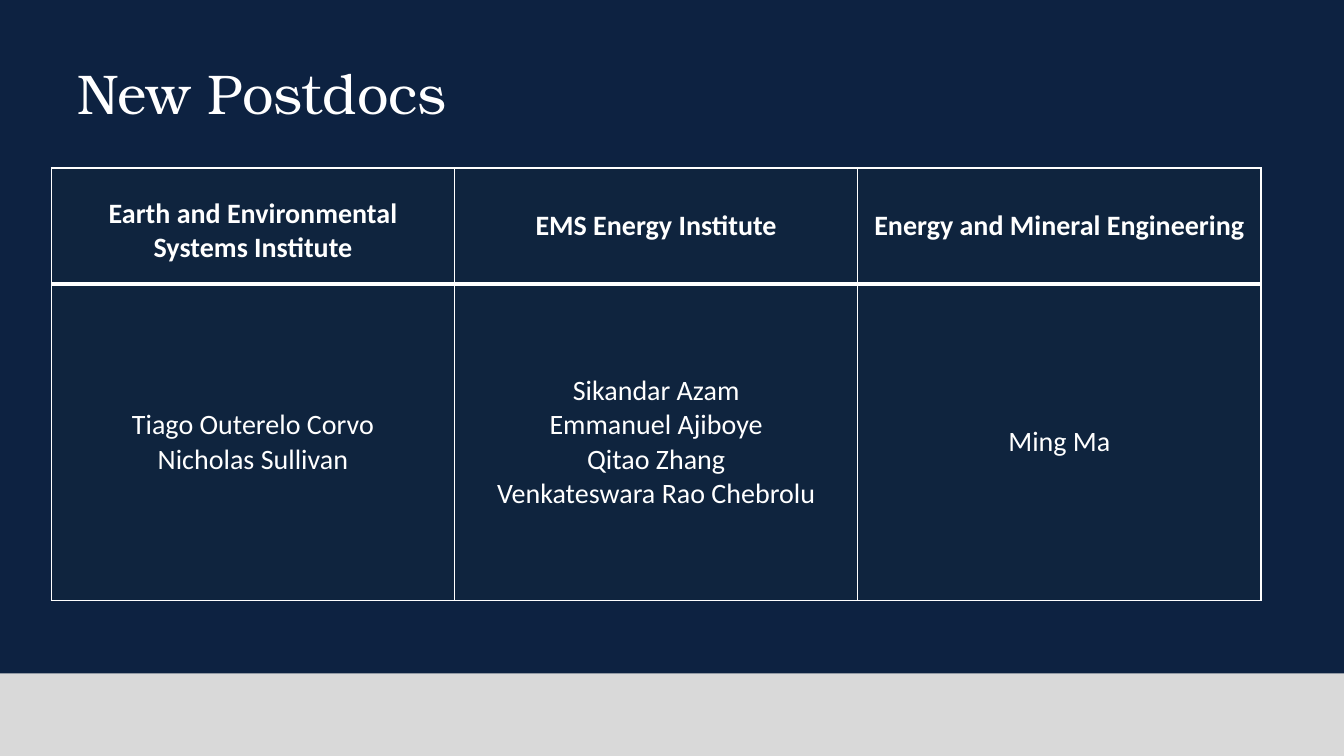
from pptx import Presentation
from pptx.dml.color import RGBColor
from pptx.enum.shapes import MSO_SHAPE
from pptx.enum.text import MSO_ANCHOR, PP_ALIGN
from pptx.oxml.ns import qn
from pptx.util import Pt
from lxml.etree import SubElement

COLORS = {"navy": "0D2241", "cell": "0F243E", "band": "D9D9D9", "white": "FFFFFF"}
INSTITUTES = {
    "Earth and Environmental Systems Institute": ["Tiago Outerelo Corvo", "Nicholas Sullivan"],
    "EMS Energy Institute": [
        "Sikandar Azam", "Emmanuel Ajiboye", "Qitao Zhang", "Venkateswara Rao Chebrolu",
    ],
    "Energy and Mineral Engineering": ["Ming Ma"],
}


class SlideBuilder:
    title_font = "TeX Gyre Bonum"
    body_font = "Calibri"

    def __init__(self, deck):
        self.page = deck.slides.add_slide(deck.slide_layouts[5])

    def paint(self, fill, color):
        fill.solid()
        fill.fore_color.rgb = RGBColor.from_string(COLORS[color])

    def add_lines(self, frame, lines, font, size, align, bold=False):
        for index, line in enumerate(lines):
            para = frame.paragraphs[0] if index == 0 else frame.add_paragraph()
            para.alignment = align
            span = para.add_run()
            span.text = line
            span.font.name = font
            span.font.size = Pt(size)
            span.font.bold = bold
            span.font.color.rgb = RGBColor.from_string(COLORS["white"])

    def background(self, color):
        self.paint(self.page.background.fill, color)

    def band(self, left, top, width, height, color):
        box = self.page.shapes.add_shape(
            MSO_SHAPE.RECTANGLE, Pt(left), Pt(top), Pt(width), Pt(height))
        box.shadow.inherit = False
        box.line.fill.background()
        self.paint(box.fill, color)

    def title(self, text, left, top, width, height):
        box = self.page.shapes.title
        box.left, box.top, box.width, box.height = Pt(left), Pt(top), Pt(width), Pt(height)
        box.text_frame.vertical_anchor = MSO_ANCHOR.MIDDLE
        self.add_lines(box.text_frame, [text], self.title_font, 40, PP_ALIGN.LEFT)

    def borders(self, cell, widths):
        properties = cell._tc.get_or_add_tcPr()
        for index, (side, width) in enumerate(widths.items()):
            line = properties.makeelement(qn(f"a:ln{side}"), {"w": str(Pt(width))})
            fill = SubElement(line, qn("a:solidFill"))
            SubElement(fill, qn("a:srgbClr"), val=COLORS["white"])
            properties.insert(index, line)

    def cell(self, cell, lines, header):
        cell.vertical_anchor = MSO_ANCHOR.MIDDLE
        cell.margin_left = cell.margin_right = Pt(7.8)
        cell.margin_top = cell.margin_bottom = Pt(4)
        self.paint(cell.fill, "cell")
        self.add_lines(cell.text_frame, lines, self.body_font, 20, PP_ALIGN.CENTER, header)
        top, bottom = (1, 3) if header else (3, 1)
        self.borders(cell, {"L": 1, "R": 1, "T": top, "B": bottom})

    def table(self, columns, left, top, width, row_heights):
        frame = self.page.shapes.add_table(
            len(row_heights), len(columns), Pt(left), Pt(top), Pt(width), Pt(sum(row_heights)))
        table = frame.table
        for row, height in zip(table.rows, row_heights):
            row.height = Pt(height)
        for index, (institute, names) in enumerate(columns.items()):
            table.columns[index].width = Pt(width / len(columns))
            self.cell(table.cell(0, index), [institute], True)
            self.cell(table.cell(1, index), names, False)
        first_header = table.cell(0, 0)
        first_header.vertical_anchor = MSO_ANCHOR.BOTTOM
        first_header.margin_bottom = Pt(13.5)


def main():
    deck = Presentation()
    deck.slide_width, deck.slide_height = Pt(960), Pt(540)
    builder = SlideBuilder(deck)
    builder.background("navy")
    builder.band(0, 481, 960, 59, "band")
    builder.title("New Postdocs", 48, 26, 864, 80)
    builder.table(INSTITUTES, 36.7, 120, 864, [83, 226])
    deck.save("out.pptx")


if __name__ == "__main__":
    main()
